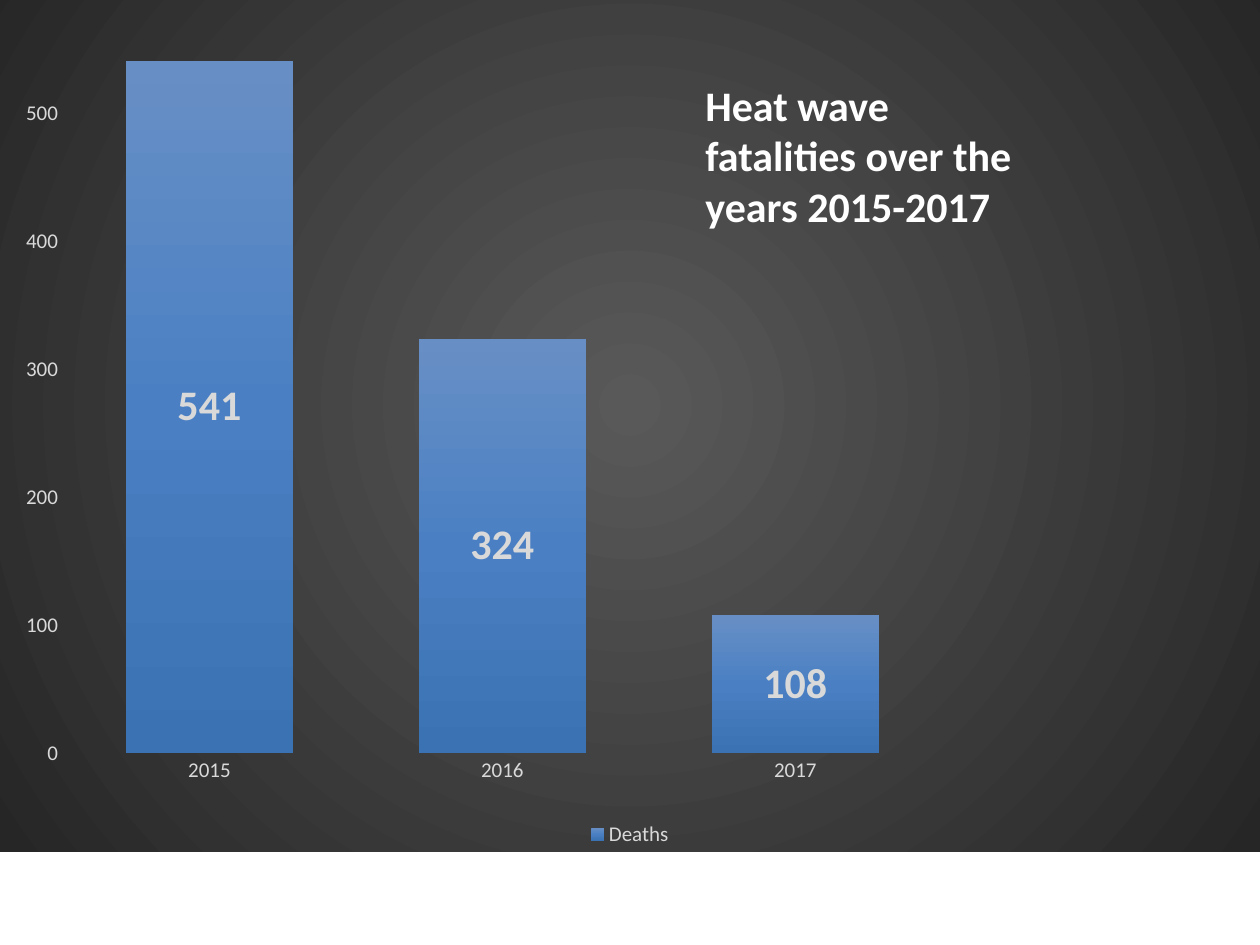
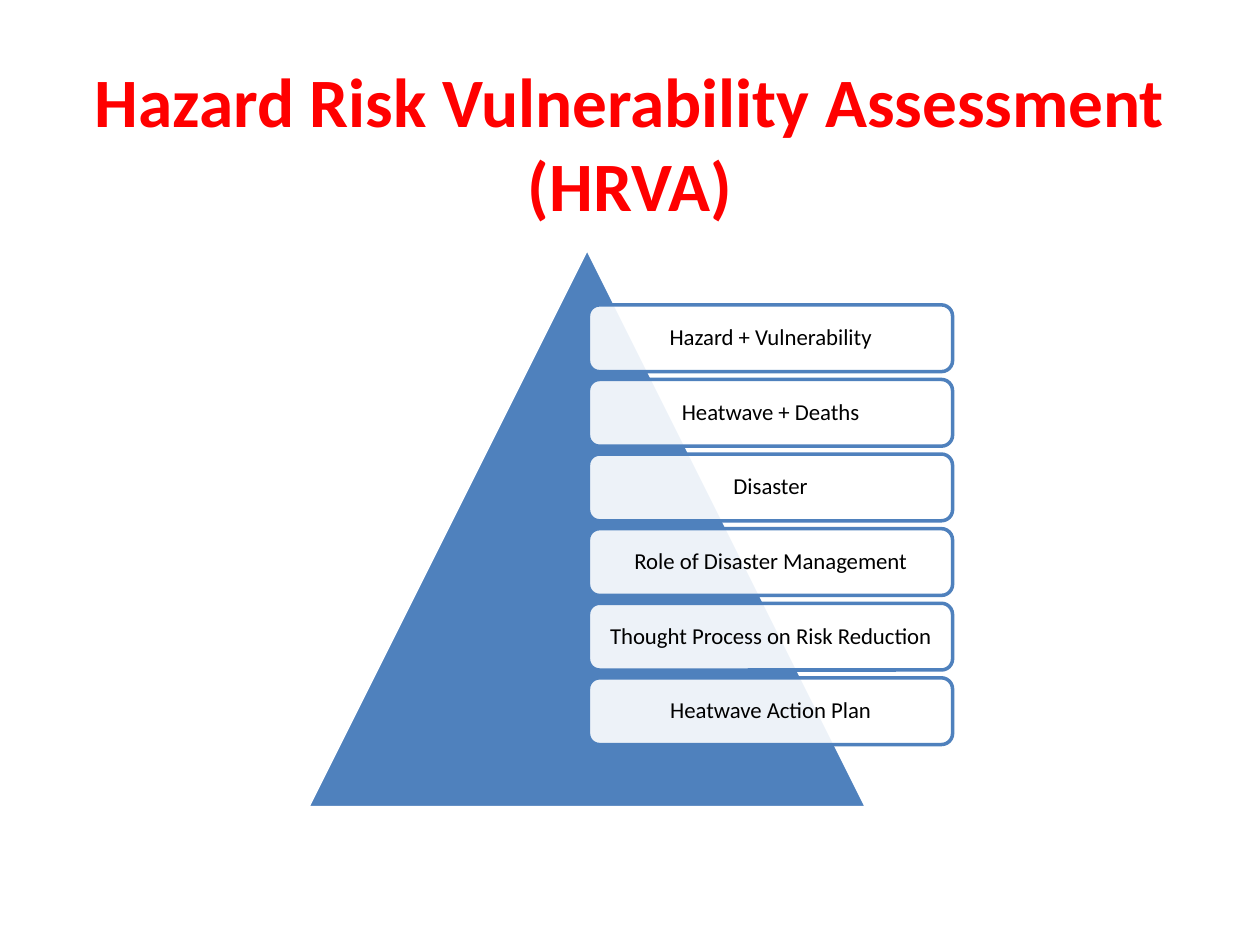
import dataclasses

import lxml.etree
import pptx
import pptx.chart.data
import pptx.dml.color
import pptx.enum.chart
import pptx.enum.shapes
import pptx.enum.text
import pptx.oxml.ns
import pptx.util

# Shared look
FONT = "Calibri"
WHITE = pptx.dml.color.RGBColor(0xFF, 0xFF, 0xFF)
BLACK = pptx.dml.color.RGBColor(0x00, 0x00, 0x00)
RED = pptx.dml.color.RGBColor(0xFF, 0x00, 0x00)
BLUE = pptx.dml.color.RGBColor(0x4F, 0x81, 0xBD)
PALE_GREY = pptx.dml.color.RGBColor(0xD9, 0xD9, 0xD9)
MID_GREY = pptx.dml.color.RGBColor(0x59, 0x59, 0x59)
DARK_GREY = pptx.dml.color.RGBColor(0x26, 0x26, 0x26)
BAR_TOP = pptx.dml.color.RGBColor(0x68, 0x8F, 0xC5)
BAR_MIDDLE = pptx.dml.color.RGBColor(0x4A, 0x80, 0xC3)
BAR_BOTTOM = pptx.dml.color.RGBColor(0x3B, 0x72, 0xB3)

# The slide is a grid of 100 columns by 75 rows
SLIDE_WIDTH, SLIDE_HEIGHT = pptx.util.Inches(10), pptx.util.Inches(7.5)
COLUMN, ROW = SLIDE_WIDTH / 100, SLIDE_HEIGHT / 75


@dataclasses.dataclass(frozen=True)
class Area:
    left: float
    top: float
    width: float
    height: float

    def lengths(self) -> tuple:
        return (round(self.left * COLUMN), round(self.top * ROW),
                round(self.width * COLUMN), round(self.height * ROW))


@dataclasses.dataclass(frozen=True)
class TextStyle:
    size: float
    color: pptx.dml.color.RGBColor
    bold: bool = False
    align: pptx.enum.text.PP_ALIGN = pptx.enum.text.PP_ALIGN.CENTER
    anchor: pptx.enum.text.MSO_ANCHOR = pptx.enum.text.MSO_ANCHOR.MIDDLE
    inset: float = 0.1
    line_spacing: float = 1.0


TITLE = TextStyle(39.6, RED, bold=True)
CARD = TextStyle(13, BLACK, inset=0.05, line_spacing=0.9)
CHART_HEADING = TextStyle(24, WHITE, bold=True, align=pptx.enum.text.PP_ALIGN.LEFT,
                          anchor=pptx.enum.text.MSO_ANCHOR.TOP)

CHART_AREA = Area(0, -3.3, 100, 70.9)
HEADING_AREA = Area(55, 5.8, 28.3, 13.1)
TITLE_AREA = Area(5, 5, 90, 12.5)
PYRAMID_AREA = Area(24.4, 19.7, 44.4, 44.4)
FIRST_CARD = Area(46.7, 24.2, 28.9, 5.3)
CARD_STEP = 5.92
PLOT_SHARES = {"x": 0.05, "y": 0.03, "w": 0.93, "h": 0.86}

DEATHS = {"2015": 541, "2016": 324, "2017": 108, "": None}
STEPS = ("Hazard + Vulnerability", "Heatwave + Deaths", "Disaster",
         "Role of Disaster Management", "Thought Process on Risk Reduction",
         "Heatwave Action Plan")


# Helpers
def set_all(target: object, values: dict) -> None:
    for name, value in values.items():
        setattr(target, name, value)


def add_xml(parent, tag: str, **attributes):
    return lxml.etree.SubElement(parent, pptx.oxml.ns.qn(tag),
                                 {name: str(value) for name, value in attributes.items()})


def set_font(font, size: float, color: pptx.dml.color.RGBColor, bold: bool = False) -> None:
    set_all(font, {"name": FONT, "size": pptx.util.Pt(size), "bold": bold})
    font.color.rgb = color


def write(box, text: str, style: TextStyle) -> None:
    inset = pptx.util.Inches(style.inset)
    set_all(box.text_frame, {
        "word_wrap": True, "vertical_anchor": style.anchor,
        "margin_left": inset, "margin_right": inset,
        "margin_top": inset / 2 if style.inset == 0.1 else inset,
        "margin_bottom": inset / 2 if style.inset == 0.1 else inset})
    para = box.text_frame.paragraphs[0]
    set_all(para, {"alignment": style.align, "line_spacing": style.line_spacing})
    span = para.add_run()
    span.text = text
    set_font(span.font, style.size, style.color, style.bold)


def add_text(page, area: Area, text: str, style: TextStyle) -> None:
    write(page.shapes.add_textbox(*area.lengths()), text, style)


def add_shape(page, kind, area: Area, fill, line):
    shape = page.shapes.add_shape(kind, *area.lengths())
    shape.shadow.inherit = False
    shape.fill.solid()
    shape.fill.fore_color.rgb = fill
    shape.line.color.rgb = line
    shape.line.width = pptx.util.Pt(2)
    return shape


def add_gradient(properties, colors: tuple, radial: bool = False) -> None:
    gradient = add_xml(properties, "a:gradFill", rotWithShape=1)
    stops = add_xml(gradient, "a:gsLst")
    for index, color in enumerate(colors):
        stop = add_xml(stops, "a:gs", pos=100000 * index // (len(colors) - 1))
        add_xml(stop, "a:srgbClr", val=color)
    if radial:
        circle = add_xml(gradient, "a:path", path="circle")
        add_xml(circle, "a:fillToRect", l=50000, t=50000, r=50000, b=50000)
    else:
        add_xml(gradient, "a:lin", ang=5400000, scaled=0)


# Chart of deaths by year
def style_axis(axis) -> None:
    set_all(axis, {"has_major_gridlines": False,
                   "major_tick_mark": pptx.enum.chart.XL_TICK_MARK.NONE,
                   "minor_tick_mark": pptx.enum.chart.XL_TICK_MARK.NONE})
    axis.format.line.fill.background()
    set_font(axis.tick_labels.font, 12, PALE_GREY)


def place_plot(plot_area) -> None:
    for old in plot_area.findall(pptx.oxml.ns.qn("c:layout")):
        plot_area.remove(old)
    layout = add_xml(plot_area, "c:layout")
    plot_area.insert(0, layout)
    manual = add_xml(layout, "c:manualLayout")
    add_xml(manual, "c:layoutTarget", val="inner")
    for side in ("x", "y"):
        add_xml(manual, f"c:{side}Mode", val="edge")
    for side, share in PLOT_SHARES.items():
        add_xml(manual, f"c:{side}", val=share)


def add_deaths_chart(page) -> None:
    data = pptx.chart.data.CategoryChartData()
    data.categories = list(DEATHS)
    data.add_series("Deaths", list(DEATHS.values()))
    chart = page.shapes.add_chart(pptx.enum.chart.XL_CHART_TYPE.COLUMN_STACKED,
                                  *CHART_AREA.lengths(), data).chart
    set_font(chart.font, 10, BLACK)
    set_all(chart, {"has_title": False, "has_legend": True})
    set_all(chart.legend, {"position": pptx.enum.chart.XL_LEGEND_POSITION.BOTTOM,
                           "include_in_layout": False})
    set_font(chart.legend.font, 12, PALE_GREY)
    for axis in (chart.category_axis, chart.value_axis):
        style_axis(axis)
    set_all(chart.value_axis, {"minimum_scale": 0, "maximum_scale": 600, "major_unit": 100})

    plot = chart.plots[0]
    set_all(plot, {"gap_width": 75, "overlap": 100, "vary_by_categories": False,
                   "has_data_labels": True})
    set_all(plot.data_labels, {"show_value": True,
                               "position": pptx.enum.chart.XL_LABEL_POSITION.CENTER})
    set_font(plot.data_labels.font, 24, PALE_GREY, bold=True)

    # Gradients of the bars and of the backdrop
    plot.series[0].format.fill.background()
    name = pptx.oxml.ns.qn
    bars = chart.element.find(f".//{name('c:ser')}/{name('c:spPr')}")
    bars.remove(bars.find(name("a:noFill")))
    add_gradient(bars, (BAR_TOP, BAR_MIDDLE, BAR_BOTTOM))
    backdrop = add_xml(chart.element, "c:spPr")
    chart.element.find(name("c:chart")).addnext(backdrop)
    add_gradient(backdrop, (MID_GREY, DARK_GREY), radial=True)
    add_xml(add_xml(backdrop, "a:ln"), "a:noFill")
    place_plot(chart.element.find(f".//{name('c:plotArea')}"))


# Slides
def build_fatalities(page) -> None:
    add_deaths_chart(page)
    add_text(page, HEADING_AREA, "Heat wave fatalities over the years 2015-2017", CHART_HEADING)


def build_assessment(page) -> None:
    add_text(page, TITLE_AREA, "Hazard Risk Vulnerability Assessment (HRVA)", TITLE)
    add_shape(page, pptx.enum.shapes.MSO_SHAPE.ISOSCELES_TRIANGLE, PYRAMID_AREA, BLUE, WHITE)
    for index, step in enumerate(STEPS):
        area = dataclasses.replace(FIRST_CARD, top=FIRST_CARD.top + index * CARD_STEP)
        card = add_shape(page, pptx.enum.shapes.MSO_SHAPE.ROUNDED_RECTANGLE, area, WHITE, BLUE)
        color = card.element.spPr.find(pptx.oxml.ns.qn("a:solidFill"))[0]
        add_xml(color, "a:alpha", val=90000)
        write(card, step, CARD)


def main() -> None:
    deck = pptx.Presentation()
    set_all(deck, {"slide_width": SLIDE_WIDTH, "slide_height": SLIDE_HEIGHT})
    for build in (build_fatalities, build_assessment):
        page = deck.slides.add_slide(deck.slide_layouts[6])
        page.background.fill.solid()
        page.background.fill.fore_color.rgb = WHITE
        build(page)
    deck.save("out.pptx")


if __name__ == "__main__":
    main()
